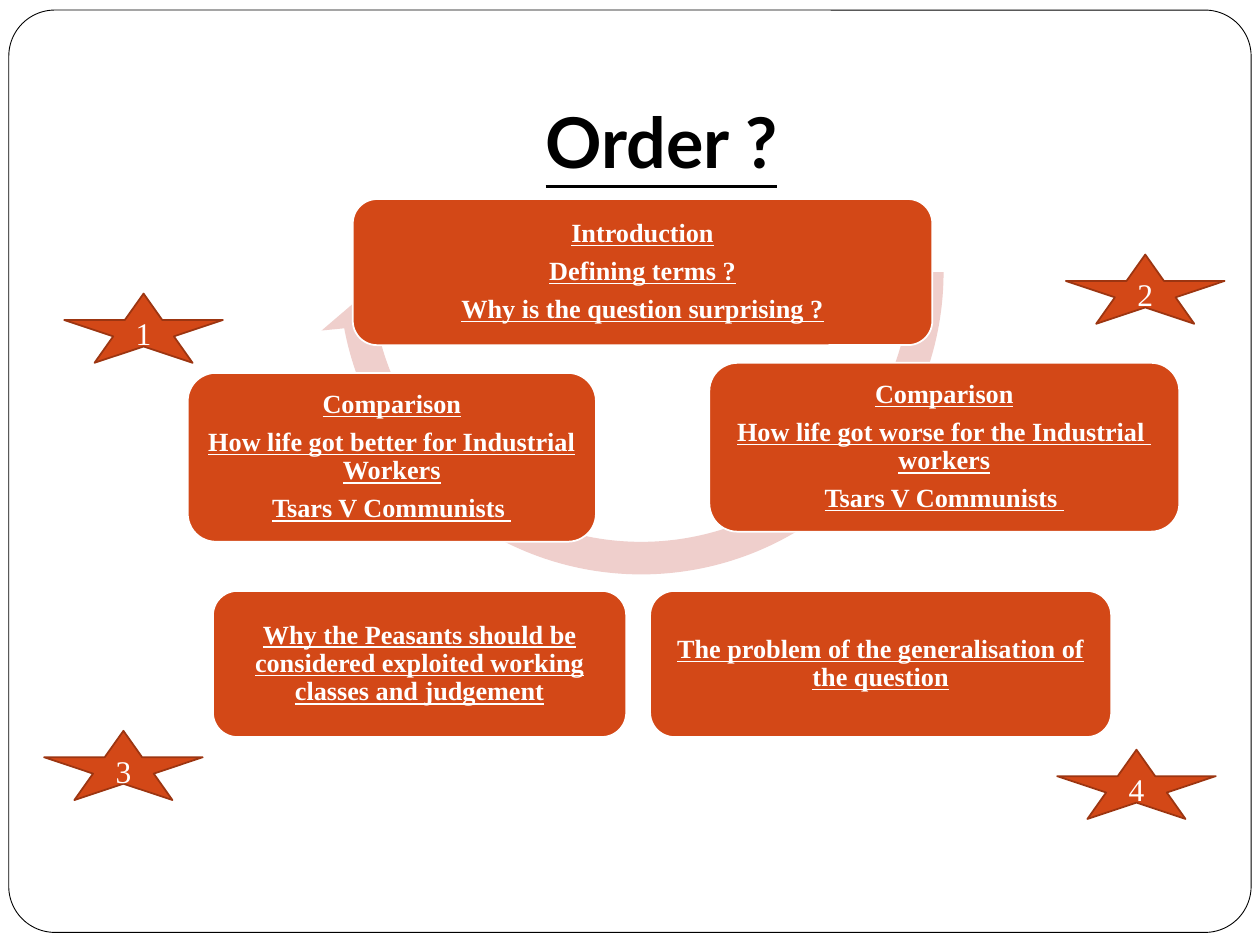
from pptx import Presentation, util as u
from pptx.dml.color import RGBColor
from pptx.enum import shapes, text

THEME = {
    "paper": "FFFFFF", "ink": "000000", "accent": "D34817",
    "star_edge": "9C3511", "cycle": "EFCFCC",
    "title_font": "Lato", "body_font": "Times New Roman",
    "title_size": 40, "step_size": 15, "star_size": 18,
}
KIND = shapes.MSO_SHAPE

deck = Presentation()
deck.slide_width, deck.slide_height = u.Inches(10), u.Inches(7.5)
column, row = deck.slide_width / 100, deck.slide_height / 75
slide = deck.slides.add_slide(deck.slide_layouts[6])


def draw(kind, left, top, width, height, fill, edge=None, weight=1):
    part = slide.shapes.add_shape(kind, round(left * column), round(top * row),
                                  round(width * column), round(height * row))
    part.shadow.inherit = False
    part.fill.solid()
    part.fill.fore_color.rgb = RGBColor.from_string(THEME[fill])
    if edge:
        part.line.color.rgb = RGBColor.from_string(THEME[edge])
        part.line.width = u.Pt(weight)
    else:
        part.line.fill.background()
    return part


def write(part, wording, role, colour, strong=True):
    frame = part.text_frame
    frame.text = wording
    frame.word_wrap = True
    frame.vertical_anchor = text.MSO_ANCHOR.MIDDLE
    for paragraph in frame.paragraphs:
        paragraph.alignment = text.PP_ALIGN.CENTER
        for run in paragraph.runs:
            font = run.font
            font.name = THEME["title_font" if role == "title" else "body_font"]
            font.size = u.Pt(THEME[role + "_size"])
            font.color.rgb = RGBColor.from_string(THEME[colour])
            font.bold = font.underline = strong
    return frame


border = draw(KIND.ROUNDED_RECTANGLE, 0.7, 0.8, 98.6, 73.2, "paper", "ink", 0.5)
border.adjustments[0] = 0.05

heading = slide.shapes.add_textbox(round(10 * column), round(3 * row),
                                   round(85 * column), round(12.5 * row))
heading_frame = write(heading, "Order ?", "title", "ink")
heading_frame.vertical_anchor = text.MSO_ANCHOR.BOTTOM
heading_frame.margin_bottom = u.Inches(0.1)

cycle = draw(KIND.CIRCULAR_ARROW, 25.1, -4.2, 51.6, 51.6, "cycle")
for index, value in enumerate([0.05, 3.17, 101.4, -13.75, 0.06]):
    cycle.adjustments[index] = value

steps = [
    (28, 15.8, 46, 11.6, ["Introduction", "Defining terms ?",
                          "Why is the question surprising ?"]),
    (56.3, 28.8, 37.3, 13.4, ["Comparison",
                              "How life got worse for the Industrial  workers",
                              "Tsars V Communists "]),
    (51.6, 46.9, 36.6, 11.6, ["The problem of the generalisation of the question"]),
    (16.9, 46.9, 32.8, 11.6, ["Why the Peasants should be considered exploited "
                              "working classes and judgement"]),
    (14.9, 29.6, 32.4, 13.4, ["Comparison",
                              "How life got better for Industrial Workers",
                              "Tsars V Communists "]),
]
for left, top, width, height, points in steps:
    step = draw(KIND.ROUNDED_RECTANGLE, left, top, width, height, "accent", "paper")
    step_frame = write(step, "\n".join(points), "step", "paper")
    step_frame.margin_left = step_frame.margin_right = 0
    step_frame.margin_top = step_frame.margin_bottom = 0
    for paragraph in step_frame.paragraphs:
        paragraph.line_spacing = 0.9
        paragraph.space_after = u.Pt(5.4)

star_places = [(5.1, 23.3), (84.6, 20.2), (3.5, 58), (83.9, 59.5)]
for number, (left, top) in enumerate(star_places, start=1):
    star = draw(KIND.STAR_5_POINT, left, top, 12.6, 5.5, "accent", "star_edge")
    write(star, str(number), "star", "paper", strong=False)

deck.save("out.pptx")
